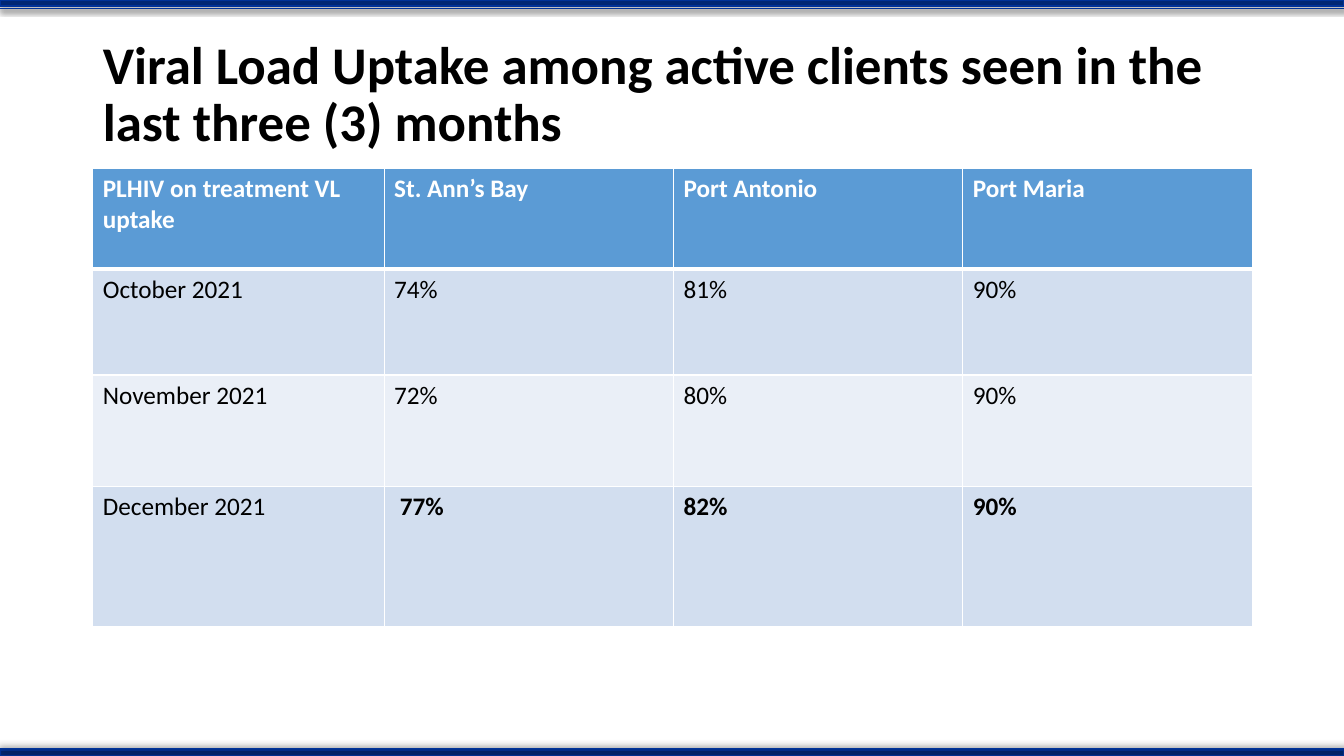
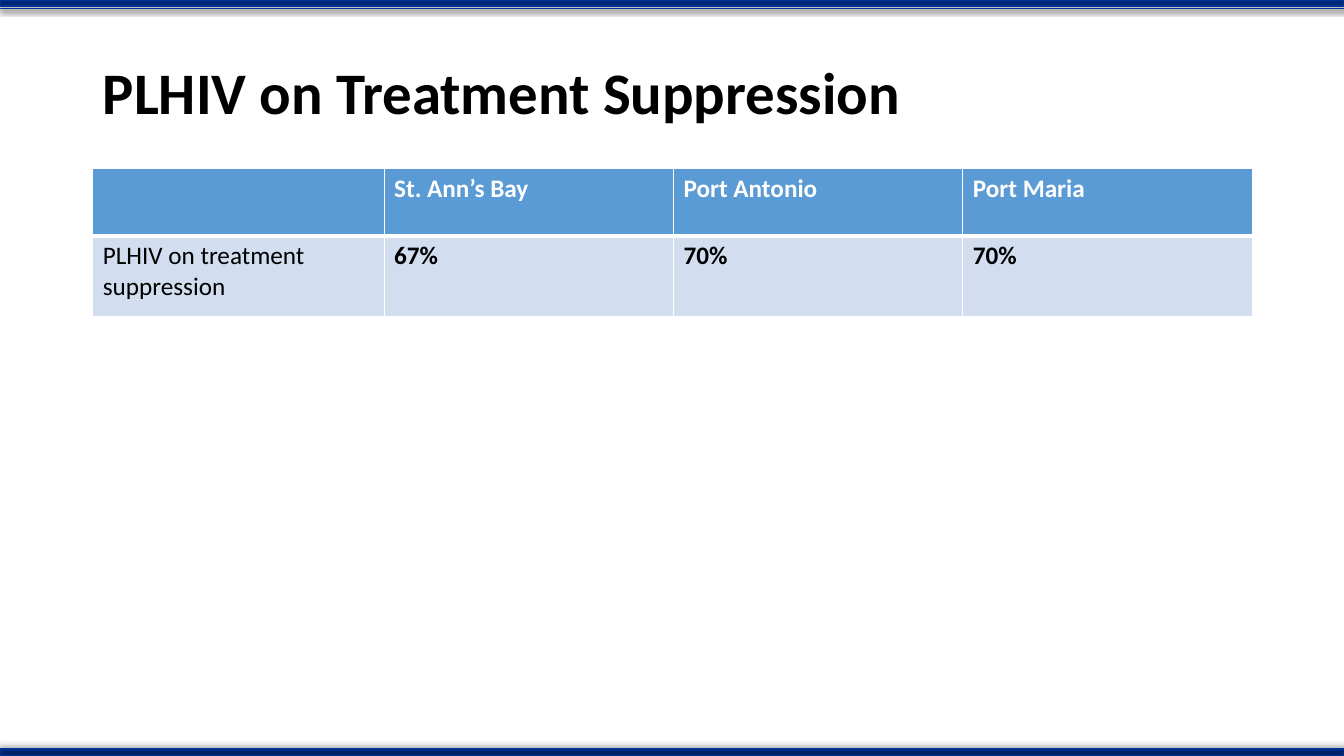
from dataclasses import dataclass

from lxml import etree
from pptx import Presentation
from pptx.dml.color import RGBColor
from pptx.enum import shapes, text
from pptx.oxml import ns, parse_xml
from pptx.util import Inches, Pt

FONT = "Calibri"
BLACK = RGBColor(0x00, 0x00, 0x00)
WHITE = RGBColor(0xFF, 0xFF, 0xFF)
NAVY = RGBColor(0x00, 0x27, 0x74)
ROYAL_BLUE = RGBColor(0x00, 0x33, 0x99)
HEADER_BLUE = RGBColor(0x5B, 0x9B, 0xD5)
ROW_FILLS = (RGBColor(0xD2, 0xDE, 0xEF), RGBColor(0xEA, 0xEF, 0xF7))

SLIDE_W, SLIDE_H = 13.33, 7.5
LEFT, CONTENT_W = 0.92, 11.5
TABLE_TOP = 1.67
LABEL_W = 2.89
BAND_H = 0.06
THIN, THICK = 1, 3
CLINICS = ("St. Ann’s Bay", "Port Antonio", "Port Maria")


@dataclass(frozen=True)
class Band:
    top: float
    rule_y: float
    shadow_angle: int


@dataclass(frozen=True)
class Row:
    height: float
    label: str
    values: tuple[str, ...]
    bold_values: bool = False


@dataclass(frozen=True)
class UptakeSlide:
    title: str
    title_size: float
    header: Row
    body: tuple[Row, ...]


BANDS = (Band(0, 0.08, 90), Band(SLIDE_H - BAND_H, SLIDE_H - 0.08, 270))

SLIDES = (
    UptakeSlide(
        "Viral Load Uptake among active clients seen in the last three (3) months",
        37.8,
        Row(1, "PLHIV on treatment VL uptake", CLINICS),
        (
            Row(1.05, "October 2021", ("74%", "81%", "90%")),
            Row(1.11, "November 2021", ("72%", "80%", "90%")),
            Row(1.39, "December 2021", (" 77%", "82%", "90%"), bold_values=True),
        ),
    ),
    UptakeSlide(
        "PLHIV on Treatment Suppression",
        42,
        Row(0.67, "", CLINICS),
        (Row(0.8, "PLHIV on treatment suppression", ("67%", "70%", "70%"), bold_values=True),),
    ),
)


def add_shadow(shape, angle: int) -> None:
    shape.element.spPr.append(parse_xml(
        f'<a:effectLst {ns.nsdecls("a")}>'
        f'<a:outerShdw blurRad="{Pt(4)}" dist="{Pt(3)}" dir="{angle * 60000}" rotWithShape="0">'
        '<a:srgbClr val="000000"><a:alpha val="40000"/></a:srgbClr>'
        '</a:outerShdw></a:effectLst>'
    ))


def add_bands(slide) -> None:
    """Draw the edge bands and hand them to the slide's layout, which all slides share."""
    layout_tree = slide.slide_layout.shapes.element
    for band in BANDS:
        bar = slide.shapes.add_shape(
            shapes.MSO_SHAPE.RECTANGLE,
            Inches(0), Inches(band.top), Inches(SLIDE_W), Inches(BAND_H),
        )
        bar.fill.solid()
        bar.fill.fore_color.rgb = NAVY
        bar.line.color.rgb = ROYAL_BLUE
        bar.line.width = Pt(1)
        add_shadow(bar, band.shadow_angle)

        rule = slide.shapes.add_connector(
            shapes.MSO_CONNECTOR.STRAIGHT,
            Inches(0), Inches(band.rule_y), Inches(SLIDE_W), Inches(band.rule_y),
        )
        rule.line.color.rgb = ROYAL_BLUE
        rule.line.width = Pt(0.5)
        add_shadow(rule, 45)

        for part in (bar, rule):
            layout_tree.append(part.element)


def add_run(paragraph, wording: str, size: float, color: RGBColor, bold: bool) -> None:
    run = paragraph.add_run()
    run.text = wording
    run.font.name = FONT
    run.font.size = Pt(size)
    run.font.color.rgb = color
    run.font.bold = bold


def fill_title(title, wording: str, size: float) -> None:
    title.left, title.top = Inches(LEFT), Inches(0.4)
    title.width, title.height = Inches(CONTENT_W), Inches(1.1)
    frame = title.text_frame
    frame.word_wrap = True
    frame.auto_size = text.MSO_AUTO_SIZE.NONE
    frame.vertical_anchor = text.MSO_ANCHOR.MIDDLE
    paragraph = frame.paragraphs[0]
    paragraph.alignment = text.PP_ALIGN.LEFT
    paragraph.line_spacing = 0.9
    add_run(paragraph, wording, size, BLACK, True)


def set_borders(cell, top: float, bottom: float) -> None:
    """Add white borders; call before filling, since borders precede the fill in the XML."""
    properties = cell._tc.get_or_add_tcPr()
    for side, width in (("L", THIN), ("R", THIN), ("T", top), ("B", bottom)):
        border = etree.SubElement(properties, ns.qn(f"a:ln{side}"), w=str(Pt(width)))
        solid = etree.SubElement(border, ns.qn("a:solidFill"))
        etree.SubElement(solid, ns.qn("a:srgbClr"), val=str(WHITE))


def add_uptake_table(slide, header: Row, body: tuple[Row, ...]) -> None:
    rows = (header, *body)
    clinic_count = len(header.values)
    table = slide.shapes.add_table(
        len(rows), clinic_count + 1,
        Inches(LEFT), Inches(TABLE_TOP),
        Inches(CONTENT_W), Inches(sum(row.height for row in rows)),
    ).table
    table.horz_banding = False
    for index, column in enumerate(table.columns):
        column.width = Inches((CONTENT_W - LABEL_W) / clinic_count if index else LABEL_W)

    for row_index, row in enumerate(rows):
        table.rows[row_index].height = Inches(row.height)
        is_header = row_index == 0
        fill = HEADER_BLUE if is_header else ROW_FILLS[(row_index - 1) % len(ROW_FILLS)]
        for column_index, wording in enumerate((row.label, *row.values)):
            cell = table.cell(row_index, column_index)
            set_borders(
                cell,
                top=THICK if row_index == 1 else THIN,
                bottom=THICK if is_header else THIN,
            )
            cell.fill.solid()
            cell.fill.fore_color.rgb = fill
            if wording:
                bold = is_header or (row.bold_values and column_index > 0)
                add_run(cell.text_frame.paragraphs[0], wording, 18,
                        WHITE if is_header else BLACK, bold)


def main() -> None:
    deck = Presentation()
    deck.slide_width, deck.slide_height = Inches(SLIDE_W), Inches(SLIDE_H)
    title_only = deck.slide_layouts[5]
    for index, content in enumerate(SLIDES):
        slide = deck.slides.add_slide(title_only)
        if index == 0:
            add_bands(slide)
        fill_title(slide.shapes.title, content.title, content.title_size)
        add_uptake_table(slide, content.header, content.body)
    deck.save("out.pptx")


if __name__ == "__main__":
    main()
